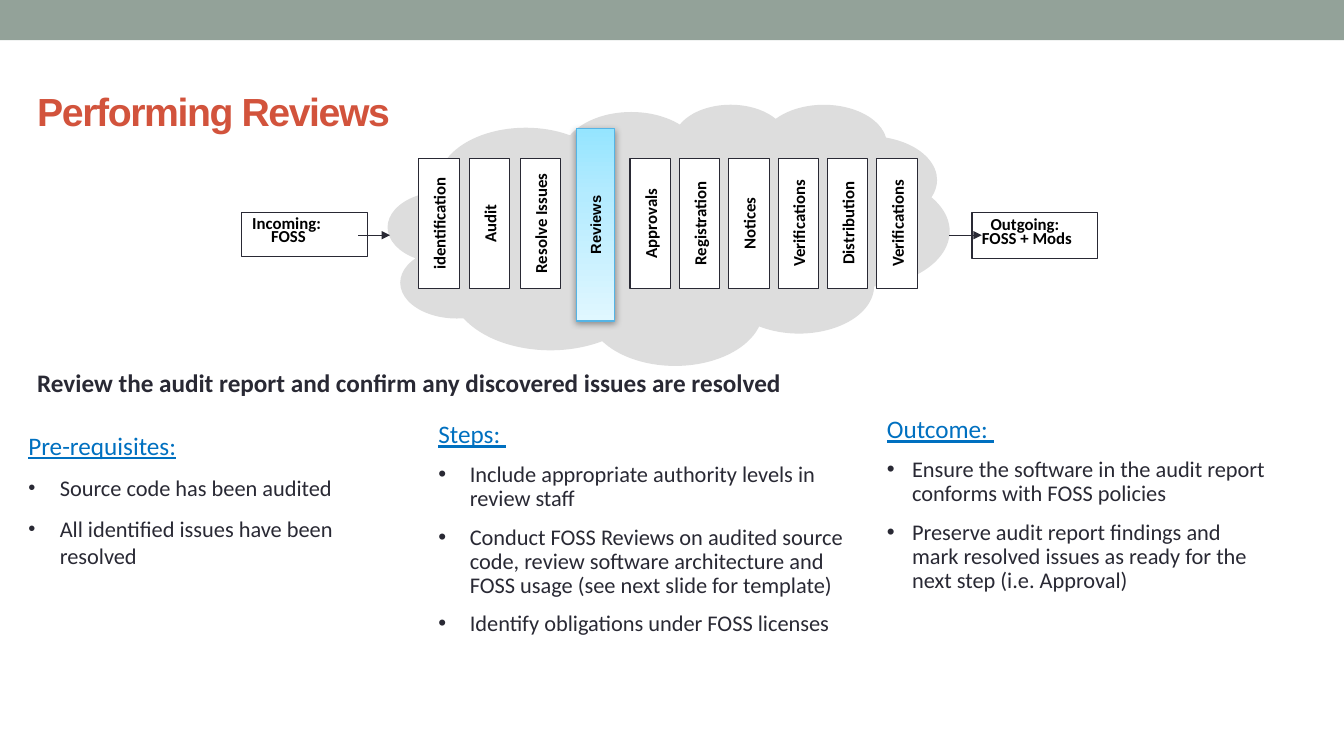
from copy import deepcopy
from pptx import Presentation
from pptx.dml.color import RGBColor
from pptx.enum.shapes import MSO_CONNECTOR, MSO_SHAPE
from pptx.enum.text import MSO_ANCHOR, MSO_AUTO_SIZE, PP_ALIGN
from pptx.oxml import parse_xml
from pptx.oxml.ns import nsdecls
from pptx.util import Pt
from lxml.etree import SubElement

COLORS = {
    "band": "93A299", "cloud": "DDDDDD", "white": "FFFFFF", "black": "000000",
    "ink": "292934", "title": "D2533C", "heading": "0070C0", "highlight_line": "55B4E5",
    "highlight_top": "95E5FF", "highlight_middle": "B4EBFF", "highlight_bottom": "E0F7FF",
}


def style_text(para, size, color, font="Calibri", bold=False, underline=False):
    for span in para.runs:
        span.font.name = font
        span.font.size = Pt(size)
        span.font.bold = bold
        span.font.underline = underline
        span.font.color.rgb = RGBColor.from_string(COLORS[color])


def add_block(kind, left, top, width, height, fill, line=None):
    block = page.shapes.add_shape(kind, Pt(left), Pt(top), Pt(width), Pt(height))
    block.shadow.inherit = False
    block.fill.solid()
    block.fill.fore_color.rgb = RGBColor.from_string(COLORS[fill])
    if line:
        block.line.color.rgb = RGBColor.from_string(COLORS[line])
        block.line.width = Pt(0.75)
    else:
        block.line.fill.background()
    return block


deck = Presentation()
deck.slide_width, deck.slide_height = Pt(960), Pt(540)
page = deck.slides.add_slide(deck.slide_layouts[5])

add_block(MSO_SHAPE.RECTANGLE, 0, 0, 960, 28.8, "band")

title = page.shapes.title
title.left, title.top, title.width, title.height = Pt(19.4), Pt(40.3), Pt(864), Pt(77.8)
title.text_frame.text = "Performing Reviews"
title.text_frame.auto_size = MSO_AUTO_SIZE.NONE
title.text_frame.vertical_anchor = MSO_ANCHOR.MIDDLE
title_para = title.text_frame.paragraphs[0]
title_para.alignment = PP_ALIGN.LEFT
style_text(title_para, 28, "title", "Arial", bold=True)
title_para.runs[0].font._element.set("spc", "-100")

cloud = add_block(MSO_SHAPE.CLOUD_CALLOUT, 277.2, 74.2, 401, 186.5, "cloud")
cloud.adjustments[0], cloud.adjustments[1] = -0.007, 0.116

end_boxes = [
    (172.8, 151.5, 32, 23, 0.65, ["Incoming: ", "FOSS"]),
    (694.3, 151.5, 33, 11, 0.7, ["Outgoing: ", "FOSS + Mods"]),
]
for left, top, height, right_inset, spacing, lines in end_boxes:
    box = add_block(MSO_SHAPE.RECTANGLE, left, top, 89.5, height, "white", "ink")
    frame = box.text_frame
    frame.text = "\n".join(lines)
    frame.vertical_anchor = MSO_ANCHOR.TOP
    frame.margin_left, frame.margin_right = Pt(0), Pt(right_inset)
    frame.margin_top, frame.margin_bottom = Pt(5), Pt(0)
    for para in frame.paragraphs:
        para.alignment = PP_ALIGN.CENTER
        para.line_spacing = spacing
        style_text(para, 12, "black", bold=True)

for start, end in [(256, 278.6), (678.2, 701.3)]:
    arrow = page.shapes.add_connector(MSO_CONNECTOR.STRAIGHT, Pt(start), Pt(168), Pt(end), Pt(168))
    arrow.line.color.rgb = RGBColor.from_string(COLORS["ink"])
    arrow.line.width = Pt(0.75)
    arrow.line._get_or_add_ln().append(parse_xml(f'<a:tailEnd {nsdecls("a")} type="triangle"/>'))
    arrow._element.spPr.append(parse_xml(f'<a:effectLst {nsdecls("a")}/>'))

before = ["identification", "Audit", "Resolve Issues"]
after = ["Approvals", "Registration", "Notices", "Verifications", "Distribution", "Verifications"]
stages = [(name, 299 + 36.25 * index) for index, name in enumerate(before)]
stages.append(("Reviews", 411.5))
stages += [(name, 450 + 35.25 * index) for index, name in enumerate(after)]

for name, left in stages:
    current = name == "Reviews"
    top, width, height = (91.8, 27.5, 137.5) if current else (113.3, 29, 92.5)
    line = "highlight_line" if current else "ink"
    bar = add_block(MSO_SHAPE.RECTANGLE, left, top, width, height, "white", line)
    if current:
        bar.fill.gradient()
        bar.fill.gradient_angle = 270
        first, last = bar.fill.gradient_stops
        first.position, last.position = 0, 1
        first.color.rgb = RGBColor.from_string(COLORS["highlight_top"])
        last.color.rgb = RGBColor.from_string(COLORS["highlight_bottom"])
        middle = deepcopy(first._gs)
        first._gs.addnext(middle)
        middle_stop = bar.fill.gradient_stops[1]
        middle_stop.position = 0.35
        middle_stop.color.rgb = RGBColor.from_string(COLORS["highlight_middle"])
        effects = bar._element.spPr.find("{*}effectLst")
        effects.append(parse_xml(
            f'<a:outerShdw {nsdecls("a")} blurRad="63500" dist="20320" dir="5400000" rotWithShape="0">'
            '<a:srgbClr val="000000"><a:alpha val="38000"/></a:srgbClr></a:outerShdw>'))
    frame = bar.text_frame
    frame.text = name
    frame.word_wrap = False
    frame.vertical_anchor = MSO_ANCHOR.MIDDLE
    frame._txBody.bodyPr.set("vert", "vert270")
    frame.paragraphs[0].alignment = PP_ALIGN.CENTER
    size, font = (10.5, "Arial") if current else (12, "Calibri")
    style_text(frame.paragraphs[0], size, "black", font, bold=True)

summary = page.shapes.add_textbox(Pt(19.4), Pt(258.5), Pt(940), Pt(29))
summary.text_frame.word_wrap = True
summary.text_frame.text = "Review the audit report and confirm any discovered issues are resolved"
style_text(summary.text_frame.paragraphs[0], 18, "ink", bold=True)

columns = [
    (0, 282.2, 298.8, 234.7, (20.2, 14.4, 14.4, 17.3), 1.5, 1, 22.5, 90, "Pre-requisites:", [
        "Source code has been audited",
        "All identified issues have been resolved"]),
    (306, 298, 318.2, 218.2, (7.2, 3.6, 7.2, 3.6), 0.9, 0.9, 22.5, 100, "Steps: ", [
        "Include appropriate authority levels in review staff",
        "Conduct FOSS Reviews on audited source code, review software architecture "
        "and FOSS usage (see next slide for template)",
        "Identify obligations under FOSS licenses"]),
    (626.4, 294.5, 284.4, 223.2, (7.2, 3.6, 7.2, 3.6), 0.9, 0.9, 18, 100, "Outcome: ", [
        "Ensure the software in the audit report conforms with FOSS policies",
        "Preserve audit report findings and mark resolved issues as ready for the "
        "next step (i.e. Approval)"]),
]
for (left, top, width, height, insets, heading_spacing, item_spacing,
     indent, bullet_size, heading, items) in columns:
    box = page.shapes.add_textbox(Pt(left), Pt(top), Pt(width), Pt(height))
    frame = box.text_frame
    frame.word_wrap = True
    frame.margin_left, frame.margin_top, frame.margin_right, frame.margin_bottom = map(Pt, insets)
    frame.text = "\n".join([heading] + items)
    for para in frame.paragraphs:
        para.space_before = Pt(10)
        para.line_spacing = item_spacing
        style_text(para, 16, "ink")
    heading_para, *item_paras = frame.paragraphs
    heading_para.line_spacing = heading_spacing
    style_text(heading_para, 18, "heading", underline=True)
    for para in item_paras:
        properties = para._p.get_or_add_pPr()
        properties.set("marL", str(Pt(indent)))
        properties.set("indent", str(-Pt(indent)))
        properties.append(parse_xml(f'<a:buSzPct {nsdecls("a")} val="{bullet_size * 1000}"/>'))
        properties.append(parse_xml(f'<a:buFont {nsdecls("a")} typeface="Arial"/>'))
        properties.append(parse_xml(f'<a:buChar {nsdecls("a")} char="•"/>'))

deck.save("out.pptx")
